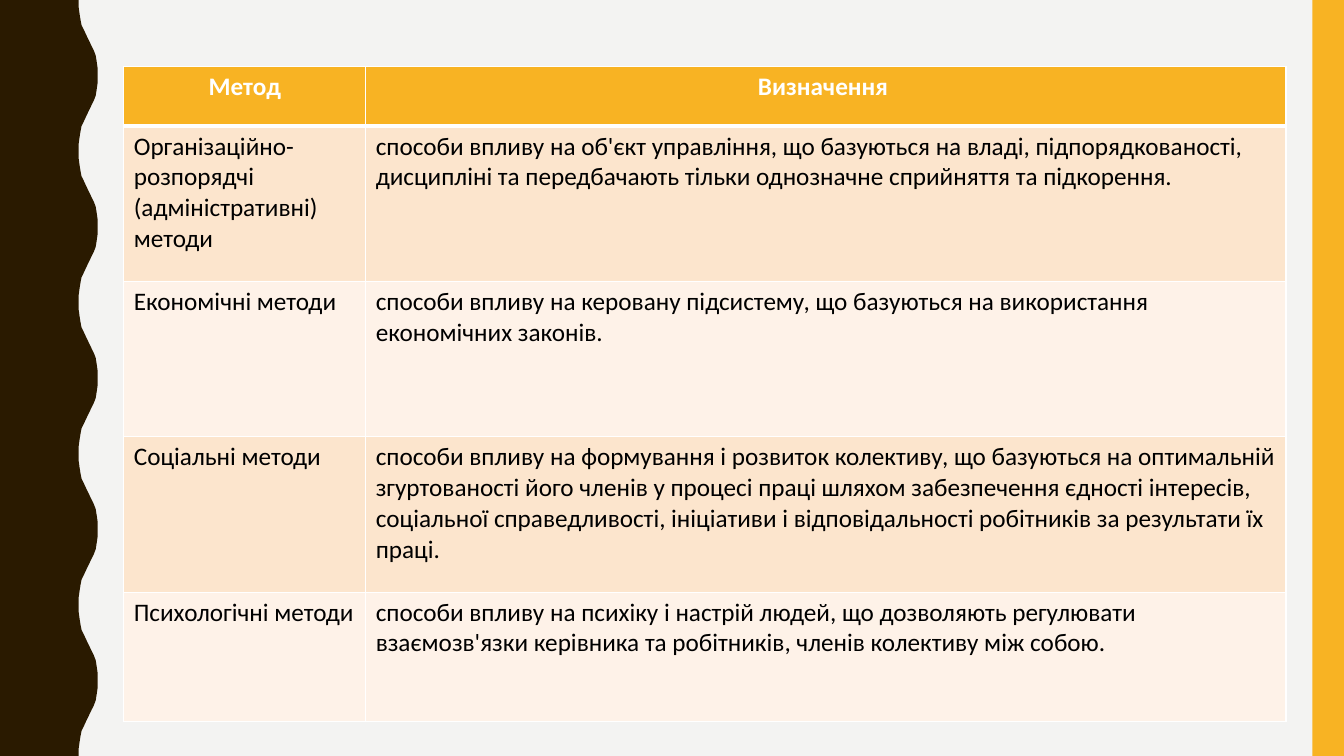
from lxml.etree import SubElement
from pptx import Presentation
from pptx.dml.color import RGBColor
from pptx.enum.shapes import MSO_SHAPE
from pptx.enum.text import PP_ALIGN
from pptx.oxml.ns import qn
from pptx.util import Pt

COLORS = {
    "background": "F3F3F2",
    "wave": "2A1A00",
    "accent": "F8B323",
    "odd_row": "FCE5CD",
    "even_row": "FEF2E8",
    "white": "FFFFFF",
    "black": "000000",
}

METHODS = [
    ("Метод", "Визначення "),
    ("Організаційно-розпорядчі (адміністративні) методи",
     "способи впливу на об'єкт управління, що базуються на владі, підпорядкованості, "
     "дисципліні та передбачають тільки однозначне сприйняття та підкорення."),
    ("Економічні методи",
     "способи впливу на керовану підсистему, що базуються на використання "
     "економічних законів."),
    ("Соціальні методи",
     "способи впливу на формування і розвиток колективу, що базуються на оптимальній "
     "згуртованості його членів у процесі праці шляхом забезпечення єдності інтересів, "
     "соціальної справедливості, ініціативи і відповідальності робітників за результати "
     "їх праці."),
    ("Психологічні методи",
     "способи впливу на психіку і настрій людей, що дозволяють регулювати "
     "взаємозв'язки керівника та робітників, членів колективу між собою."),
]
COLUMN_WIDTHS = [172.8, 657.4]
ROW_HEIGHTS = [42.5, 111, 111, 111, 92.2]

# Half of one wave, from trough to crest, as (x, y) in points
HALF_WAVE = [
    (56.2, 0), (56.2, 5), (56.9, 10), (57.6, 14.4), (58.3, 18), (59.8, 21),
    (61.2, 24), (62.6, 27), (64.1, 30), (65.5, 33), (67, 36), (68.4, 39.6),
    (69.1, 44), (69.8, 49), (69.8, 54),
]
WAVE_LENGTH = 108
WAVE_COUNT = 5


def paint(shape, color):
    shape.fill.solid()
    shape.fill.fore_color.rgb = RGBColor.from_string(COLORS[color])
    shape.line.fill.background()
    shape.shadow.inherit = False


def add_borders(cell, bottom_width, top_width):
    properties = cell._tc.get_or_add_tcPr()
    widths = {"a:lnL": 1, "a:lnR": 1, "a:lnT": top_width, "a:lnB": bottom_width}
    for position, (tag, width) in enumerate(widths.items()):
        border = SubElement(properties, qn(tag), w=str(Pt(width)))
        border_fill = SubElement(border, qn("a:solidFill"))
        SubElement(border_fill, qn("a:srgbClr"), val=COLORS["white"])
        properties.insert(position, border)


presentation = Presentation()
presentation.slide_width = Pt(960)
presentation.slide_height = Pt(540)
slide = presentation.slides.add_slide(presentation.slide_layouts[6])
slide.background.fill.solid()
slide.background.fill.fore_color.rgb = RGBColor.from_string(COLORS["background"])

# Wavy left edge
full_wave = HALF_WAVE + [(x, WAVE_LENGTH - y) for x, y in HALF_WAVE[-2::-1]]
outline = [(Pt(x), Pt(y + WAVE_LENGTH * wave))
           for wave in range(WAVE_COUNT) for x, y in full_wave]
wave_builder = slide.shapes.build_freeform(0, 0)
wave_builder.add_line_segments(outline + [(0, Pt(540))], close=True)
paint(wave_builder.convert_to_shape(), "wave")

# Right stripe
stripe = slide.shapes.add_shape(MSO_SHAPE.RECTANGLE, Pt(937.5), 0, Pt(22.5), Pt(540))
paint(stripe, "accent")

# Table of methods
methods_table = slide.shapes.add_table(
    len(METHODS), len(COLUMN_WIDTHS), Pt(88.4), Pt(47.5),
    Pt(sum(COLUMN_WIDTHS)), Pt(sum(ROW_HEIGHTS))).table
for column, width in zip(methods_table.columns, COLUMN_WIDTHS):
    column.width = Pt(width)

for row_index, (row, texts) in enumerate(zip(methods_table.rows, METHODS)):
    row.height = Pt(ROW_HEIGHTS[row_index])
    is_header = row_index == 0
    row_color = "accent" if is_header else "odd_row" if row_index % 2 else "even_row"
    for cell, text in zip(row.cells, texts):
        cell.text_frame.text = text
        cell.fill.solid()
        cell.fill.fore_color.rgb = RGBColor.from_string(COLORS[row_color])
        add_borders(cell, 3 if is_header else 1, 3 if row_index == 1 else 1)
        paragraph = cell.text_frame.paragraphs[0]
        paragraph.alignment = PP_ALIGN.CENTER if is_header else PP_ALIGN.LEFT
        font = paragraph.runs[0].font
        font.name = "Calibri"
        font.size = Pt(18)
        font.bold = is_header
        font.color.rgb = RGBColor.from_string(COLORS["white" if is_header else "black"])

presentation.save("out.pptx")
